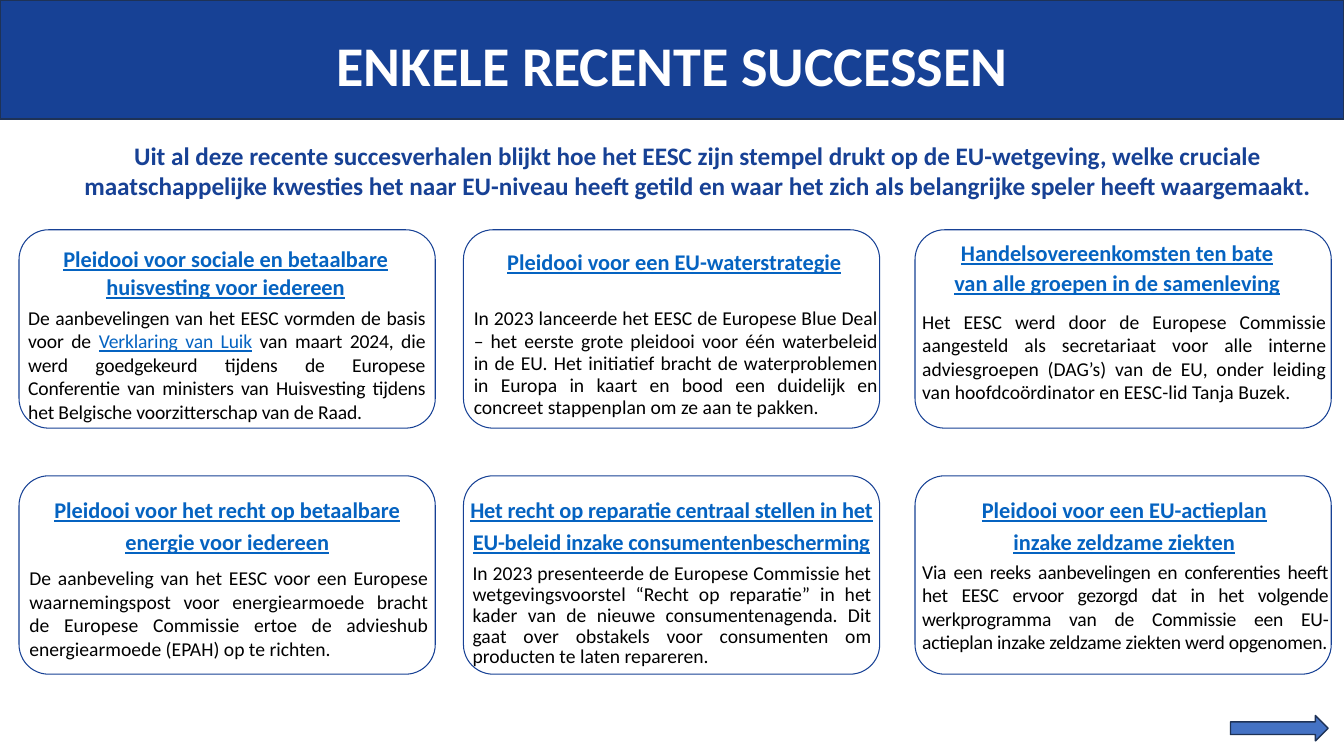
from dataclasses import dataclass

from lxml import etree
from pptx import Presentation
from pptx.dml.color import RGBColor
from pptx.enum.shapes import MSO_SHAPE
from pptx.enum.text import PP_ALIGN
from pptx.util import Cm, Pt

RECT = MSO_SHAPE.RECTANGLE
ROUND = MSO_SHAPE.ROUNDED_RECTANGLE
ARROW = MSO_SHAPE.RIGHT_ARROW
CENTER = PP_ALIGN.CENTER
JUSTIFY = PP_ALIGN.JUSTIFY

NAVY = RGBColor(0x17, 0x41, 0x95)
EDGE = RGBColor(0x1E, 0x32, 0x56)
BLUE = RGBColor(0x44, 0x72, 0xC4)
LINK = RGBColor(0x05, 0x63, 0xC1)
BLACK = RGBColor(0, 0, 0)
WHITE = RGBColor(255, 255, 255)

BODY = {"name": "Calibri", "size": Pt(14)}
HEAD = {"name": "Calibri", "size": Pt(16), "bold": True, "underline": True}
TITLE = {"name": "Calibri", "size": Pt(40), "bold": True}
INTRO = {"name": "Calibri", "size": Pt(18), "bold": True}
MARK = BODY | {"underline": True}

COLS = (0.48, 11.68, 23.06)
ROWS = (5.79, 11.99)
WIDTH, HEIGHT = 10.49, 5.0


@dataclass
class Part:
    text: str
    style: dict
    color: RGBColor


@dataclass
class Block:
    left: float
    top: float
    width: float
    height: float
    lines: list[list[Part]]
    align: PP_ALIGN
    lead: float = 0
    track: int = 0
    pad: tuple[float, float] = (0, 0)


def head(left: float, top: float, width: float, *lines: str,
         lead: float = 22.4, track: int = 0) -> Block:
    rows = [[Part(line, HEAD, LINK)] for line in lines]
    return Block(left, top, width, 1.5, rows, CENTER, lead, track)


def body(left: float, top: float, width: float, height: float, text: str,
         lead: float = 16.8, track: int = 0) -> Block:
    return Block(left, top, width, height, [[Part(text, BODY, BLACK)]],
                 JUSTIFY, lead, track)


BLOCKS = [
    Block(0, 1.3, 33.87, 1.3,
          [[Part("ENKELE RECENTE SUCCESSEN", TITLE, WHITE)]], CENTER, 33),
    Block(1.7, 3.4, 31.78, 1.8,
          [[Part("Uit al deze recente succesverhalen blijkt hoe het EESC zijn "
                 "stempel drukt op de EU-wetgeving, welke cruciale "
                 "maatschappelijke kwesties het naar EU-niveau heeft getild en "
                 "waar het zich als belangrijke speler heeft waargemaakt.",
                 INTRO, NAVY)]], CENTER, pad=(0.25, 0.13)),
    head(0.56, 6.15, 10.26, "Pleidooi voor sociale en betaalbare huisvesting "
         "voor iedereen", lead=20),
    head(12.12, 6.15, 9.75, "Pleidooi voor een EU-waterstrategie"),
    head(23.75, 5.94, 8.81, "Handelsovereenkomsten ten bate van alle groepen "
         "in de samenleving", lead=21.5),
    head(1.12, 12.4, 9.22, "Pleidooi voor het recht op betaalbare energie "
         "voor iedereen"),
    head(11.73, 12.4, 10.39, "Het recht op reparatie centraal stellen in het "
         "EU-beleid inzake consumentenbescherming", track=-10),
    head(23.04, 12.4, 10.59, "Pleidooi voor een EU-actieplan",
         "inzake zeldzame ziekten"),
    Block(0.71, 7.7, 10.01, 3.0,
          [[Part("De aanbevelingen van het EESC vormden de basis voor de ",
                 BODY, BLACK),
            Part("Verklaring van Luik", MARK, LINK),
            Part(" van maart 2024, die werd goedgekeurd tijdens de Europese "
                 "Conferentie van ministers van Huisvesting tijdens het "
                 "Belgische voorzitterschap van de Raad.", BODY, BLACK)]],
          JUSTIFY, track=-10),
    body(11.94, 7.75, 10.19, 2.84,
         "In 2023 lanceerde het EESC de Europese Blue Deal – het eerste grote "
         "pleidooi voor één waterbeleid in de EU. Het initiatief bracht de "
         "waterproblemen in Europa in kaart en bood een duidelijk en concreet "
         "stappenplan om ze aan te pakken.", 15.9),
    body(23.24, 7.8, 10.19, 2.41,
         "Het EESC werd door de Europese Commissie aangesteld als secretariaat "
         "voor alle interne adviesgroepen (DAG’s) van de EU, onder leiding van "
         "hoofdcoördinator en EESC-lid Tanja Buzek."),
    body(0.74, 14.27, 10.06, 2.41,
         "De aanbeveling van het EESC voor een Europese waarnemingspost voor "
         "energiearmoede bracht de Europese Commissie ertoe de advieshub "
         "energiearmoede (EPAH) op te richten."),
    body(11.91, 14.2, 10.06, 2.13,
         "In 2023 presenteerde de Europese Commissie het wetgevingsvoorstel "
         "“Recht op reparatie” in het kader van de nieuwe consumentenagenda. "
         "Dit gaat over obstakels voor consumenten om producten te laten "
         "repareren.", 14.9),
    body(23.24, 14.1, 10.24, 2.41,
         "Via een reeks aanbevelingen en conferenties heeft het EESC ervoor "
         "gezorgd dat in het volgende werkprogramma van de Commissie een "
         "EU-actieplan inzake zeldzame ziekten werd opgenomen.", track=-20),
]


def draw(slide, kind: MSO_SHAPE, left: float, top: float, width: float,
         height: float, fill: RGBColor | None, edge: RGBColor, line: float):
    shape = slide.shapes.add_shape(kind, Cm(left), Cm(top), Cm(width), Cm(height))
    shape.shadow.inherit = False
    if fill is None:
        shape.fill.background()
    else:
        shape.fill.solid()
        shape.fill.fore_color.rgb = fill
    shape.line.color.rgb = edge
    shape.line.width = Pt(line)
    return shape


def write(slide, block: Block) -> None:
    box = slide.shapes.add_textbox(Cm(block.left), Cm(block.top),
                                   Cm(block.width), Cm(block.height))
    frame = box.text_frame
    frame.word_wrap = True
    side, end = map(Cm, block.pad)
    frame.margin_left = frame.margin_right = side
    frame.margin_top = frame.margin_bottom = end
    for i, line in enumerate(block.lines):
        para = frame.add_paragraph() if i else frame.paragraphs[0]
        para.alignment = block.align
        if block.lead:
            para.line_spacing = Pt(block.lead)
        for part in line:
            run = para.add_run()
            run.text = part.text
            for key, value in part.style.items():
                setattr(run.font, key, value)
            run.font.color.rgb = part.color
            if block.track:
                props: etree.ElementBase = run._r.get_or_add_rPr()
                props.set("spc", str(block.track))


def main() -> None:
    deck = Presentation()
    deck.slide_width, deck.slide_height = Cm(33.87), Cm(19.05)
    slide = deck.slides.add_slide(deck.slide_layouts[6])
    draw(slide, RECT, 0, 0, 33.87, 3, NAVY, EDGE, 1)
    for top in ROWS:
        for left in COLS:
            card = draw(slide, ROUND, left, top, WIDTH, HEIGHT, None, NAVY, 0.75)
            card.adjustments[0] = 0.15
    for block in BLOCKS:
        write(slide, block)
    draw(slide, ARROW, 31.01, 18.03, 2.46, 0.64, BLUE, EDGE, 1)
    deck.save("out.pptx")


if __name__ == "__main__":
    main()
